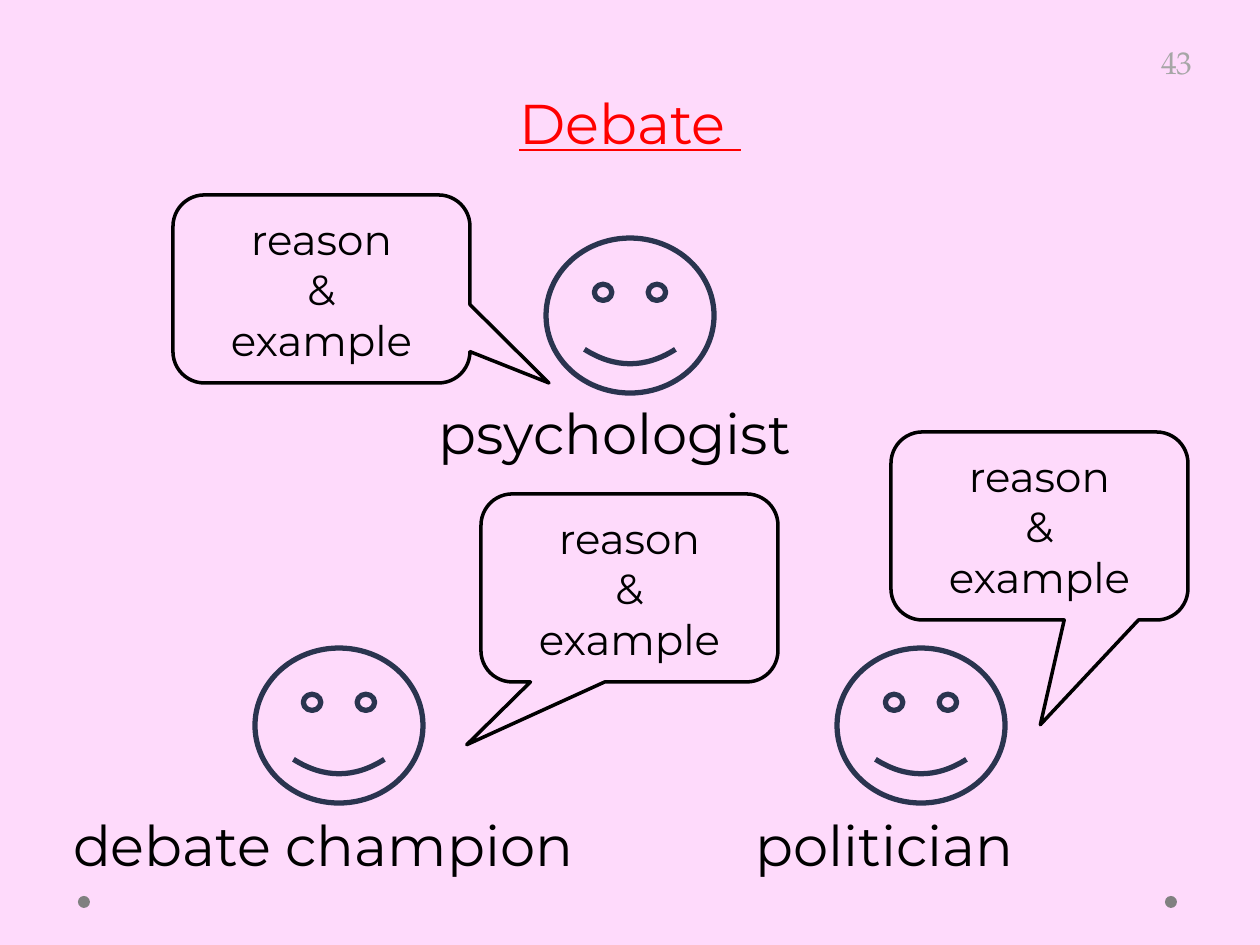
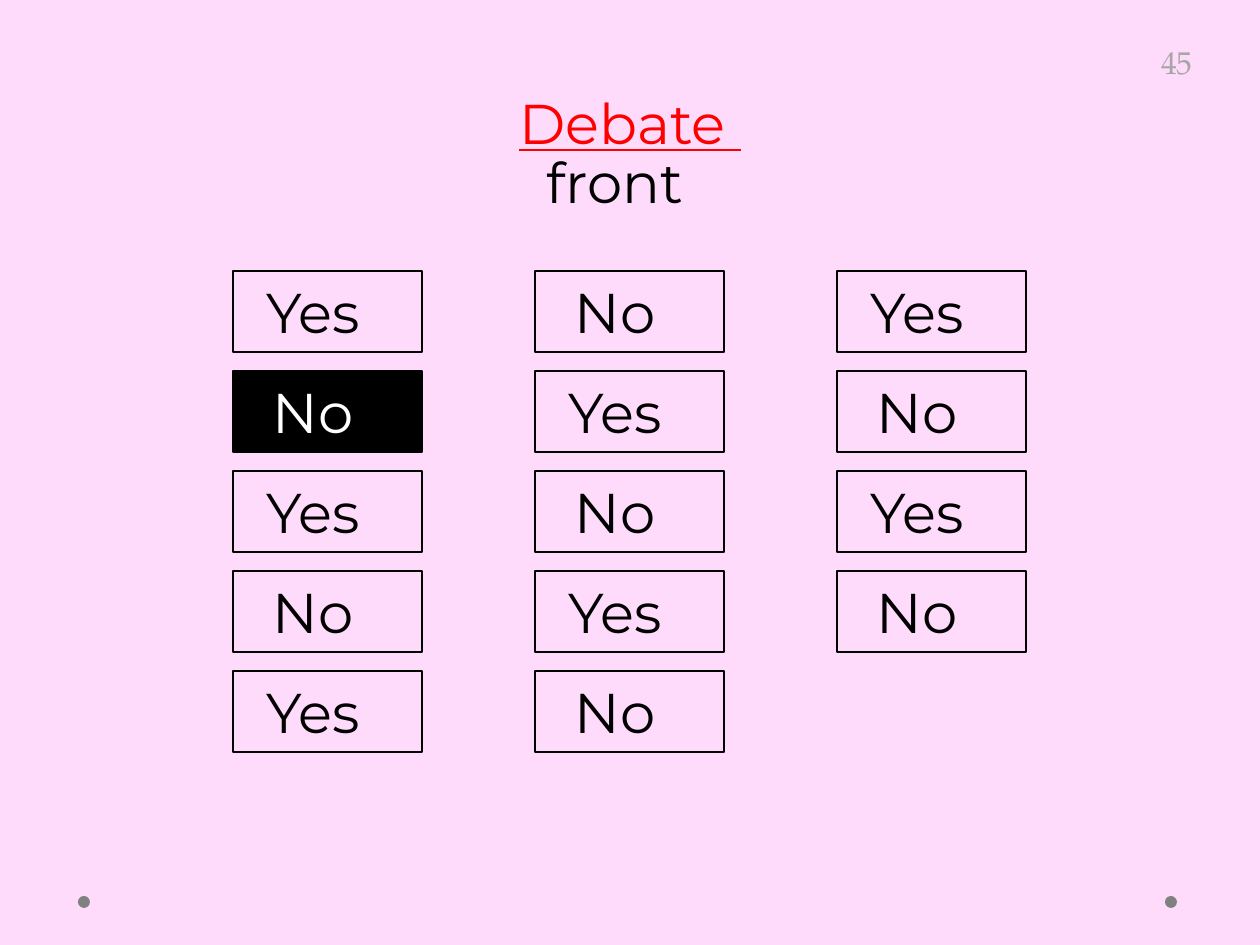
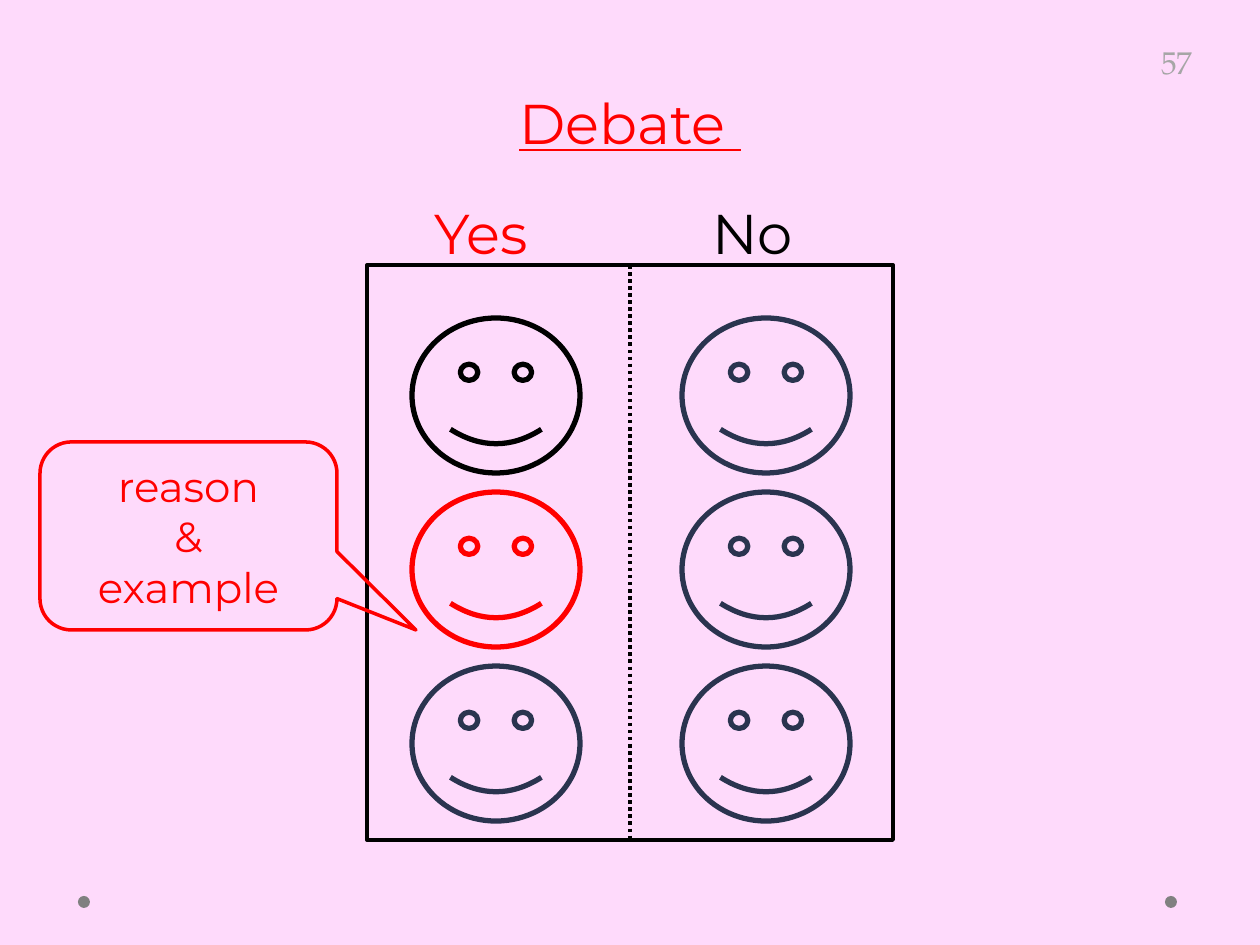
from lxml.etree import SubElement
from pptx import Presentation
from pptx.dml.color import RGBColor
from pptx.enum.dml import MSO_LINE
from pptx.enum.shapes import MSO_CONNECTOR, MSO_SHAPE as SHAPE
from pptx.enum.text import MSO_ANCHOR as ANCHOR, PP_ALIGN as ALIGN
from pptx.oxml.ns import qn
from pptx.util import Emu, Pt

PX = 914400 / 126
COLORS = {
    "pink": "FEDAFB", "black": "000000", "white": "FFFFFF", "red": "FF0000",
    "navy": "2A344F", "dot": "808080", "number": "A6A6A6",
}
BODY_FONT, NUMBER_FONT = "Montserrat", "TeX Gyre Pagella"
FACE_SIZE = (168, 155)
BUBBLE_SIZE = (297, 188)
CARD_SIZE = (189, 81)
TAIL_RIGHT = (0.766, 0.5, 0.167)
TAIL_BELOW = (0.003, 1.057, 0.167)
TAIL_LEFT = (-0.548, 0.834, 0.167)


def rgb(color):
    """Look up a palette colour."""
    return RGBColor.from_string(COLORS[color])


def emu(*lengths):
    """Turn px lengths into EMU."""
    return [Emu(round(length * PX)) for length in lengths]


def write(frame, lines, size, color, font=BODY_FONT, align=ALIGN.CENTER):
    """Fill a text frame with one paragraph per line."""
    frame.word_wrap = True
    frame.text = "\n".join(lines)
    for paragraph in frame.paragraphs:
        paragraph.alignment = align
        paragraph.font.name = font
        paragraph.font.size = Pt(size)
        paragraph.font.color.rgb = rgb(color)


def write_label(frame, word, color):
    """Write a large word set slightly left of the centre of its box."""
    frame.margin_left, frame.margin_right = emu(0, 29)
    frame.vertical_anchor = ANCHOR.TOP
    write(frame, [word], 32, color)


def add_figure(slide, kind, box, line=None, weight=0, fill=None):
    """Add a preset shape with the given outline and fill."""
    figure = slide.shapes.add_shape(kind, *emu(*box))
    figure.shadow.inherit = False
    if fill:
        figure.fill.solid()
        figure.fill.fore_color.rgb = rgb(fill)
    else:
        figure.fill.background()
    if line:
        figure.line.color.rgb = rgb(line)
        figure.line.width = Pt(weight)
    else:
        figure.line.fill.background()
    return figure


def add_label(slide, word, box, color="black"):
    """Add a free-standing large word."""
    write_label(slide.shapes.add_textbox(*emu(*box)).text_frame, word, color)


def add_face(slide, left, top, color="navy"):
    """Add one debater's smiling face."""
    add_figure(slide, SHAPE.SMILEY_FACE, (left, top, *FACE_SIZE), color, 3)


def add_bubble(slide, left, top, tail, color="black"):
    """Add a speech bubble asking for a reason and an example."""
    bubble = add_figure(slide, SHAPE.ROUNDED_RECTANGULAR_CALLOUT,
                        (left, top, *BUBBLE_SIZE), color, 2)
    for index, value in enumerate(tail):
        bubble.adjustments[index] = value
    write(bubble.text_frame, ["reason", "&", "example"], 24, color)


def add_debate_slide(prs, number):
    """Add a slide with the shared title, page number and corner dots."""
    slide = prs.slides.add_slide(prs.slide_layouts[5])
    for left in (78, 1165):
        add_figure(slide, SHAPE.OVAL, (left, 896, 12, 12), fill="dot")
    page = slide.shapes.add_textbox(*emu(1116, 37, 89, 50))
    write(page.text_frame, [number], 18, "number", NUMBER_FONT, ALIGN.RIGHT)
    title = slide.shapes.title
    title.left, title.top, title.width, title.height = emu(69, 82, 1122, 81)
    title.text_frame.vertical_anchor = ANCHOR.TOP
    write(title.text_frame, ["Debate "], 32, "red")
    title.text_frame.paragraphs[0].font.underline = True
    return slide


def build_speakers(prs):
    """Build the slide of three speakers, each with a bubble."""
    slide = add_debate_slide(prs, "43")
    for left, top in ((255, 648), (546, 238), (837, 648)):
        add_face(slide, left, top)
    add_label(slide, "psychologist", (394, 392, 471, 81))
    add_label(slide, "debate champion", (45, 804, 586, 81))
    add_label(slide, "politician", (664, 804, 471, 81))
    add_bubble(slide, 173, 195, TAIL_RIGHT)
    add_bubble(slide, 891, 432, TAIL_BELOW)
    add_bubble(slide, 481, 494, TAIL_LEFT)


def add_cards(slide, left, top, count=14, rows=5, chosen=1):
    """Lay out alternating Yes and No cards column by column."""
    for index in range(count):
        column, row = divmod(index, rows)
        box = (left + 302 * column, top + 100 * row, *CARD_SIZE)
        picked = index == chosen
        card = add_figure(slide, SHAPE.RECTANGLE, box, "black", 1.5,
                          "black" if picked else None)
        write_label(card.text_frame, ("Yes", "No")[index % 2],
                    "white" if picked else "black")


def build_seating(prs):
    """Build the slide of Yes and No seats facing the front."""
    slide = add_debate_slide(prs, "45")
    add_label(slide, "front", (535, 141, *CARD_SIZE))
    add_cards(slide, 233, 271)


def add_teams(slide, left, top, width, height):
    """Add the two facing teams inside a divided frame."""
    frame = add_figure(slide, SHAPE.RECTANGLE, (left, top, width, height),
                       "black", 2.25)
    middle = left + width // 2
    divider = slide.shapes.add_connector(
        MSO_CONNECTOR.STRAIGHT, *emu(middle, top, middle, top + height))
    divider.begin_connect(frame, 0)
    divider.end_connect(frame, 2)
    divider.line.color.rgb = rgb("black")
    divider.line.width = Pt(2)
    divider.line.dash_style = MSO_LINE.ROUND_DOT
    SubElement(divider.element.spPr, qn("a:effectLst"))
    teams = (
        ("Yes", "red", 30, 45, ("black", "red", "navy")),
        ("No", "black", 301, 315, ("navy", "navy", "navy")),
    )
    for word, color, label_x, face_x, faces in teams:
        add_label(slide, word, (left + label_x, top - 73, 198, 81), color)
        for row, face_color in enumerate(faces):
            add_face(slide, left + face_x, top + 53 + 174 * row, face_color)


def build_teams(prs):
    """Build the slide of the Yes and No teams with one speaker."""
    slide = add_debate_slide(prs, "57")
    add_teams(slide, 367, 265, 526, 575)
    add_bubble(slide, 40, 442, TAIL_RIGHT, "red")


def main():
    """Build and save the three debate slides."""
    prs = Presentation()
    prs.slide_width, prs.slide_height = emu(1260, 945)
    backdrop = prs.slide_master.background.fill
    backdrop.solid()
    backdrop.fore_color.rgb = rgb("pink")
    build_speakers(prs)
    build_seating(prs)
    build_teams(prs)
    prs.save("out.pptx")


if __name__ == "__main__":
    main()
